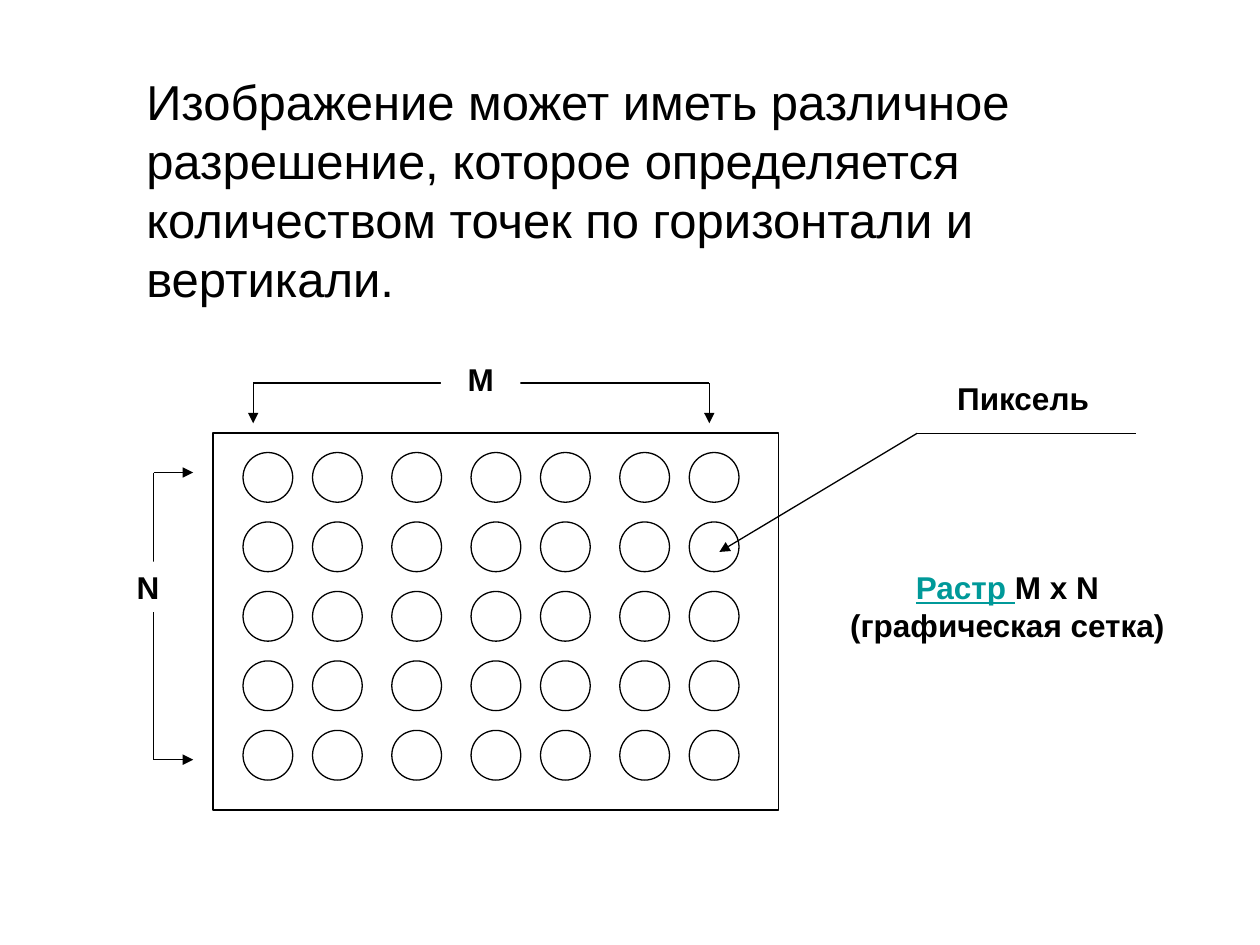
import itertools

import lxml.etree
import pptx
import pptx.dml.color
import pptx.enum.shapes
import pptx.enum.text
import pptx.oxml.ns
import pptx.util

Pt = pptx.util.Pt
BLACK = pptx.dml.color.RGBColor(0x00, 0x00, 0x00)
WHITE = pptx.dml.color.RGBColor(0xFF, 0xFF, 0xFF)
TEAL = pptx.dml.color.RGBColor(0x00, 0x99, 0x99)
CENTER = pptx.enum.text.PP_ALIGN.CENTER
SHAPES = pptx.enum.shapes.MSO_SHAPE

BODY = {"name": "Arial", "size": Pt(28)}
LABEL = {"name": "Arial", "size": Pt(18), "bold": True}
TERM = {**LABEL, "underline": True}

COLUMN_GAPS = (39.7, 45.3, 45.3, 39.7, 45.3, 39.7)
ROW_COUNT, ROW_GAP, PIXEL_SIZE = 5, 39.7, 28.4


def add_span(para, text, formats, color=BLACK):
    """Add a run with the given font values and colour."""
    span = para.add_run()
    span.text = text
    for name, value in formats.items():
        setattr(span.font, name, value)
    span.font.color.rgb = color


def add_text_box(shapes, left, top, width, height, align=None):
    """Add a wrapping text box and return it with its first paragraph."""
    box = shapes.add_textbox(Pt(left), Pt(top), Pt(width), Pt(height))
    box.text_frame.word_wrap = True
    para = box.text_frame.paragraphs[0]
    para.alignment = align
    return box, para


def add_outline(shapes, kind, left, top, width, height):
    """Add an unfilled preset shape with a thin black line."""
    shape = shapes.add_shape(kind, Pt(left), Pt(top), Pt(width), Pt(height))
    shape.shadow.inherit = False
    shape.fill.background()
    shape.line.color.rgb = BLACK
    shape.line.width = Pt(0.75)


def add_line(shapes, start, end, arrow=False):
    """Add a thin black line, with an arrowhead at its end if asked."""
    line = shapes.add_connector(
        pptx.enum.shapes.MSO_CONNECTOR.STRAIGHT, *map(Pt, start + end))
    line.line.color.rgb = BLACK
    line.line.width = Pt(0.75)
    qn = pptx.oxml.ns.qn
    if arrow:
        lxml.etree.SubElement(line.line._ln, qn("a:tailEnd"), type="triangle")
    lxml.etree.SubElement(line._element.spPr, qn("a:effectLst"))


def add_pixel_grid(shapes, left, top, width, height):
    """Draw the frame and its rows and columns of round pixels."""
    add_outline(shapes, SHAPES.RECTANGLE, left, top, width, height)
    columns = itertools.accumulate(COLUMN_GAPS, initial=left + 17.2)
    for column, row in itertools.product(columns, range(ROW_COUNT)):
        add_outline(shapes, SHAPES.OVAL, column, top + 11.1 + row * ROW_GAP,
                    PIXEL_SIZE, PIXEL_SIZE)


def add_dimension(shapes, start, end, arrow_step, text, label_box):
    """Draw a bracket with two arrows and a label over its line."""
    add_line(shapes, start, end)
    for x, y in (start, end):
        add_line(shapes, (x, y), (x + arrow_step[0], y + arrow_step[1]), True)
    box, para = add_text_box(shapes, *label_box, CENTER)
    box.fill.solid()
    box.fill.fore_color.rgb = WHITE
    add_span(para, text, LABEL)


def add_raster(page, left, top, width, height):
    """Draw the pixel grid with its horizontal and vertical dimensions."""
    shapes = page.shapes.add_group_shape().shapes
    add_pixel_grid(shapes, left, top, width, height)
    add_dimension(shapes, (left + 23, top - 28.6), (left + 283.6, top - 28.6),
                  (0, 23), "М", (left + 130.3, top - 45.4, 45.4, 28.8))
    add_dimension(shapes, (left - 33.8, top + 22.5), (left - 33.8, top + 186.6),
                  (22.5, 0), "N", (left - 56.9, top + 73.4, 39.6, 28.8))


def add_callout(page, left, top, width, height):
    """Draw the pixel label, its underline and the arrow to a pixel."""
    shapes = page.shapes.add_group_shape().shapes
    corner = (left + 10.8, top + 34.4)
    add_line(shapes, corner, (left - 102.2, top + 102.2), True)
    add_line(shapes, corner, (left + 136, top + 34.4))
    para = add_text_box(shapes, left, top, width, height, CENTER)[1]
    add_span(para, "Пиксель ", LABEL)


def add_raster_note(page, left, top, width, height):
    """Write the raster term and its explanation."""
    para = add_text_box(page.shapes, left, top, width, height, CENTER)[1]
    add_span(para, "Растр ", TERM, TEAL)
    add_span(para, "M x N", LABEL)
    para.add_line_break()
    add_span(para, "(графическая сетка)", LABEL)


def add_statement(page, left, top, width, height):
    """Write the statement on resolution."""
    para = add_text_box(page.shapes, left, top, width, height)[1]
    add_span(para, "Изображение может иметь различное разрешение, которое "
             "определяется количеством точек по горизонтали и вертикали.", BODY)


def main():
    """Build the slide and save it."""
    deck = pptx.Presentation()
    deck.slide_width, deck.slide_height = Pt(720), Pt(540)
    page = deck.slides.add_slide(deck.slide_layouts.get_by_name("Blank"))
    add_statement(page, 76.5, 37.5, 528, 142)
    add_raster(page, 121.7, 247.5, 323.3, 215.4)
    add_callout(page, 513.3, 213.2, 147.6, 28.8)
    add_raster_note(page, 468, 321, 215.3, 72)
    deck.save("out.pptx")


if __name__ == "__main__":
    main()
